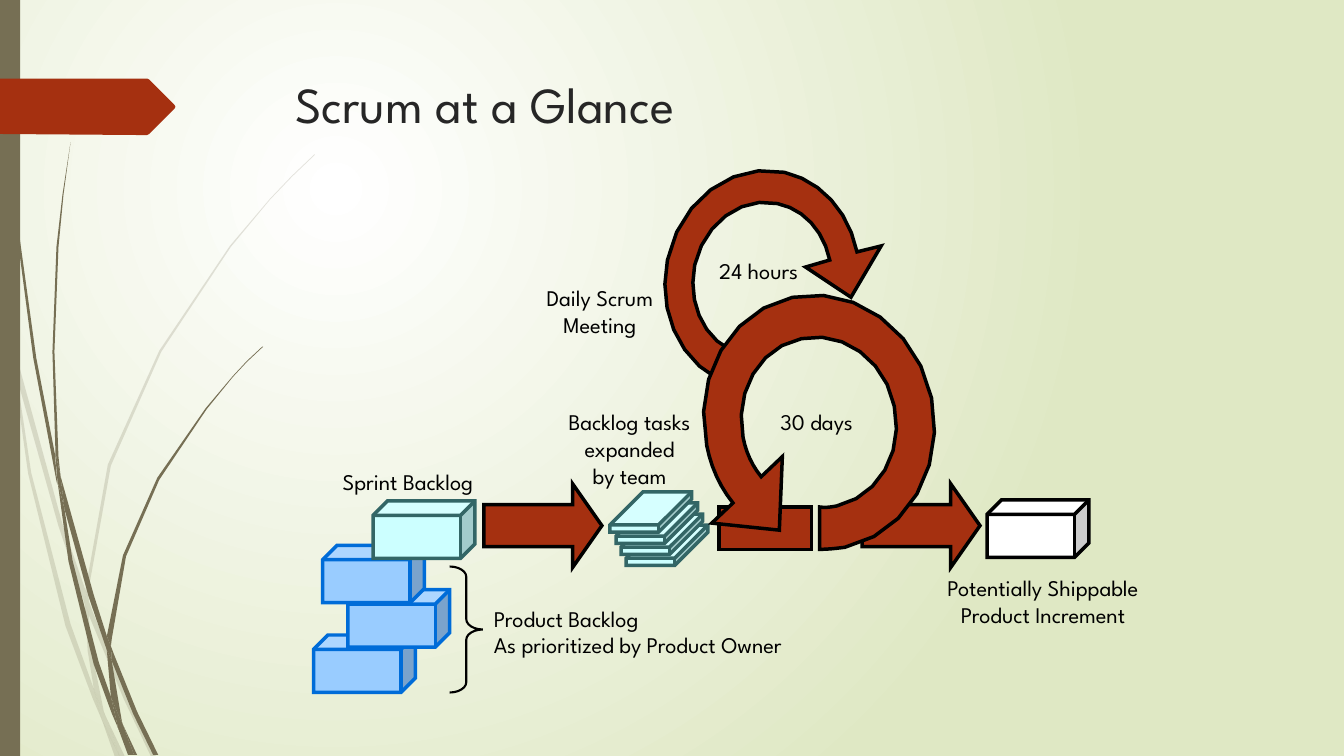
"""Build the slide that shows the Scrum cycle from backlog to product increment."""
from dataclasses import dataclass

from lxml import etree
from pptx import Presentation
from pptx import util as u
from pptx.dml import color
from pptx.enum import shapes, text
from pptx.oxml import ns
from pptx.shapes import autoshape as auto
from pptx.shapes import shapetree as tree
from pptx.slide import Slide

PX = 9144
STEPS = 6
Kind = shapes.MSO_SHAPE
Align = text.PP_ALIGN
Box = tuple[int, int, int, int]


@dataclass(frozen=True)
class Theme:
    font: str = "League Spartan"
    head: int = 36
    body: int = 16
    edge: float = 2.5
    thin: float = 1.5
    ink: str = "000000"
    title: str = "262626"
    red: str = "A53010"
    stem: str = "766F54"
    white: str = "FFFFFF"
    green: str = "DFE8C4"
    sky: str = "99CCFF"
    blue: str = "006CD8"
    ice: str = "CCFFFF"
    teal: str = "336666"


T = Theme()


@dataclass(frozen=True)
class Style:
    fill: str | None = None
    line: str | None = None
    width: float = T.edge
    alpha: int = 100


@dataclass(frozen=True)
class Block:
    kind: Kind
    box: Box
    style: Style
    adj: tuple[float, ...] = ()


@dataclass(frozen=True)
class Curve:
    route: str
    style: Style


@dataclass(frozen=True)
class Note:
    words: str
    box: Box
    align: Align = Align.CENTER


RED = Style(T.red, T.ink)
BLUE = Style(T.sky, T.blue)
TEAL = Style(T.ice, T.teal)
PALE = Style(T.stem, alpha=20)
STEM = Style(T.stem)

BACK = (
    "11 350 9 322 0 282 0 299 10 344",
    "58 522 84 599 85 586 62 520 14 345 17 376",
    "92 607 88 596 88 610 123 694 150 751 155 751 127 692",
    "119 751 124 751 105 711",
    "93 683 70 619 31 469 17 376 11 350 28 470 65 621 92 693 101 714 99 707",
    "84 599 87 646 93 683 96 692 105 711 103 706 91 646 88 610 88 608",
    "88 584 110 462 160 349 229 245 268 198 290 175 312 154 312 153 289 175 "
    "268 197 228 244 158 348 107 461 85 584 85 586 88 596",
    "101 714 114 751 119 751",
    "88 608 88 610 88 596 85 586 84 599",
    "96 692 93 683 99 707 101 714 119 751 105 711",
)
FRONT = (
    "7 110 17 233 33 355 56 477 57 481 55 457 55 453 36 355 19 232 8 109 5 48 4 0 3 0 4 48",
    "88 592 106 645 106 633 106 631 93 590 60 472 64 505",
    "113 649 110 641 111 656 132 708 152 749 157 749 136 706",
    "110 691 98 657 72 556 64 505 57 477 68 557 93 659 111 708 117 722 116 717",
    "60 472 58 453 54 349 58 245 63 193 70 141 62 193 56 245 52 349 55 449",
    "133 749 136 749 122 719",
    "57 477 64 505 60 472 55 449 55 453",
    "111 633 125 552 158 476 205 406 231 374 245 359 261 344 260 344 245 358 "
    "231 373 204 405 156 474 122 551 106 631 110 641",
    "117 722 127 749 131 749",
    "106 645 110 691 116 706 122 719 121 716 111 656 109 651",
    "106 645 109 651 111 656 110 641 106 631 106 633",
    "116 706 110 691 116 717 117 722 130 749 133 749 122 719",
)
TAG = "173 108 148 133 146 134 136 134 0 133 0 78 146 78 148 79 173 104 174 106"
DAY = (
    "823 258 C 817 229 797 207 771 202 735 194 698 222 689 263 682 298 696 333 724 347 "
    "L 712 376 C 672 355 652 306 662 258 674 199 726 160 778 171 814 179 842 210 850 250 "
    "L 874 244 844 295 799 265"
)
MONTH = (
    "755 473 C 746 462 740 449 737 434 728 389 753 344 795 336 836 327 878 357 887 403 "
    "897 449 871 493 830 502 824 503 819 504 813 503 L 813 545 C 822 545 830 544 838 543 "
    "900 530 938 464 924 395 910 327 848 282 786 295 725 308 686 374 701 442 "
    "705 463 714 483 727 499 L 706 519 773 526 776 453"
)


def arrow(left: int) -> Block:
    return Block(Kind.RIGHT_ARROW, (left, 480, 117, 83), RED, (0.5, 0.35))


def cube(left: int, top: int, style: Style) -> Block:
    return Block(Kind.CUBE, (left, top, 101, 57), style, (0.25,))


TASKS = [Block(Kind.CUBE, (621 - 16 * i // 3, 521 - 11 * i, 81, 40), TEAL, (0.82,)) for i in range(4)]
FLOW = (
    Block(Kind.RECTANGLE, (0, 0, 20, 750), STEM),
    Curve(TAG, Style(T.red)),
    arrow(855),
    Block(Kind.RECTANGLE, (713, 503, 92, 42), RED),
    Curve(DAY, RED),
    cube(311, 630, BLUE), cube(345, 585, BLUE), cube(320, 541, BLUE),
    cube(370, 497, TEAL),
)
GOAL = (
    Curve(MONTH, RED),
    arrow(480),
    cube(979, 496, Style(T.white, T.ink)),
    Block(Kind.RIGHT_BRACE, (446, 562, 33, 125), Style(None, T.ink, T.thin), (0.31, 0.5)),
)
NOTES = (
    Note("30 days", (761, 400, 98, 37)),
    Note("24 hours", (699, 250, 107, 37)),
    Note("Product Backlog\nAs prioritized by Product Owner", (480, 595, 333, 64), Align.LEFT),
    Note("Sprint Backlog", (330, 460, 163, 37), Align.LEFT),
    Note("Backlog tasks\nexpanded\nby team", (546, 400, 157, 90)),
    Note("Potentially Shippable\nProduct Increment", (921, 565, 227, 64)),
    Note("Daily Scrum\nMeeting", (525, 277, 140, 64)),
)


def rgb(code: str) -> color.RGBColor:
    return color.RGBColor.from_string(code)


def emu(box: Box) -> list[int]:
    return [v * PX for v in box]


def put(item: object, form: dict[str, object]) -> None:
    for name, value in form.items():
        setattr(item, name, value)


def trace(route: str) -> list[tuple[float, float]]:
    spots, hold, mode = [], [], "L"
    for part in route.split():
        if part.isalpha():
            mode = part
            continue
        hold.append(int(part) * PX)
        if mode == "C" and len(hold) == 6:
            ends = [spots[-1], *zip(hold[::2], hold[1::2])]
            for step in range(1, STEPS + 1):
                t = step / STEPS
                mix = ((1 - t) ** 3, 3 * t * (1 - t) ** 2, 3 * t * t * (1 - t), t ** 3)
                spots.append(tuple(sum(m * p[k] for m, p in zip(mix, ends)) for k in (0, 1)))
            hold = []
        elif mode == "L" and len(hold) == 2:
            spots.append(tuple(hold))
            hold = []
    return spots


def paint(shape: auto.Shape, style: Style) -> None:
    shape.shadow.inherit = False
    for part, code in ((shape.fill, style.fill), (shape.line.fill, style.line)):
        if code:
            part.solid()
            part.fore_color.rgb = rgb(code)
        else:
            part.background()
    if style.line:
        shape.line.width = u.Pt(style.width)
        etree.SubElement(shape.element.spPr.find(ns.qn("a:ln")), ns.qn("a:miter"), lim="800000")
    if style.alpha < 100:
        tint = shape.element.spPr.find(ns.qn("a:solidFill"))[0]
        etree.SubElement(tint, ns.qn("a:alpha"), val=str(style.alpha * 1000))


def draw(pool: tree.SlideShapes | tree.GroupShapes, item: Block | Curve) -> None:
    if isinstance(item, Curve):
        spots = trace(item.route)
        pen = pool.build_freeform(*spots[0])
        pen.add_line_segments(spots[1:], close=True)
        shape = pen.convert_to_shape()
    else:
        shape = pool.add_shape(item.kind, *emu(item.box))
        for i, value in enumerate(item.adj):
            shape.adjustments[i] = value
    paint(shape, item.style)


def write(frame: auto.TextFrame, note: Note, size: int, code: str) -> None:
    frame.text = note.words
    for line in frame.paragraphs:
        line.alignment = note.align
        put(line.font, {"name": T.font, "size": u.Pt(size)})
        line.font.color.rgb = rgb(code)


def shade(slide: Slide) -> None:
    fill = slide.background.fill
    fill.gradient()
    for stop, code, spot in zip(fill.gradient_stops, (T.white, T.green), (0, 1)):
        stop.color.rgb = rgb(code)
        stop.position = spot
    grad = slide.element.find(".//" + ns.qn("a:gradFill"))
    grad.remove(grad.find(ns.qn("a:lin")))
    ring = etree.SubElement(grad, ns.qn("a:path"), {"path": "circle"})
    etree.SubElement(ring, ns.qn("a:fillToRect"), l="50000", t="50000", r="100000", b="100000")


def main() -> None:
    deck = Presentation()
    put(deck, {"slide_width": 1333 * PX, "slide_height": 750 * PX})
    slide = deck.slides.add_slide(deck.slide_layouts[5])
    shade(slide)
    pool = slide.shapes
    leaves = [[Curve(r, s) for r in routes] for routes, s in ((BACK, PALE), (FRONT, STEM))]
    for items, joined in ((leaves[0], True), (leaves[1], True), (FLOW, False), (TASKS, True), (GOAL, False)):
        home = pool.add_group_shape().shapes if joined else pool
        for item in items:
            draw(home, item)
    head = Note("Scrum at a Glance", (283, 68, 862, 145), Align.LEFT)
    put(pool.title, dict(zip(("left", "top", "width", "height"), emu(head.box))))
    put(pool.title.text_frame, {"vertical_anchor": text.MSO_ANCHOR.TOP, "word_wrap": True})
    write(pool.title.text_frame, head, T.head, T.title)
    for note in NOTES:
        frame = pool.add_textbox(*emu(note.box)).text_frame
        put(frame, {"word_wrap": False, "auto_size": text.MSO_AUTO_SIZE.SHAPE_TO_FIT_TEXT})
        write(frame, note, T.body, T.ink)
    deck.save("out.pptx")


if __name__ == "__main__":
    main()
